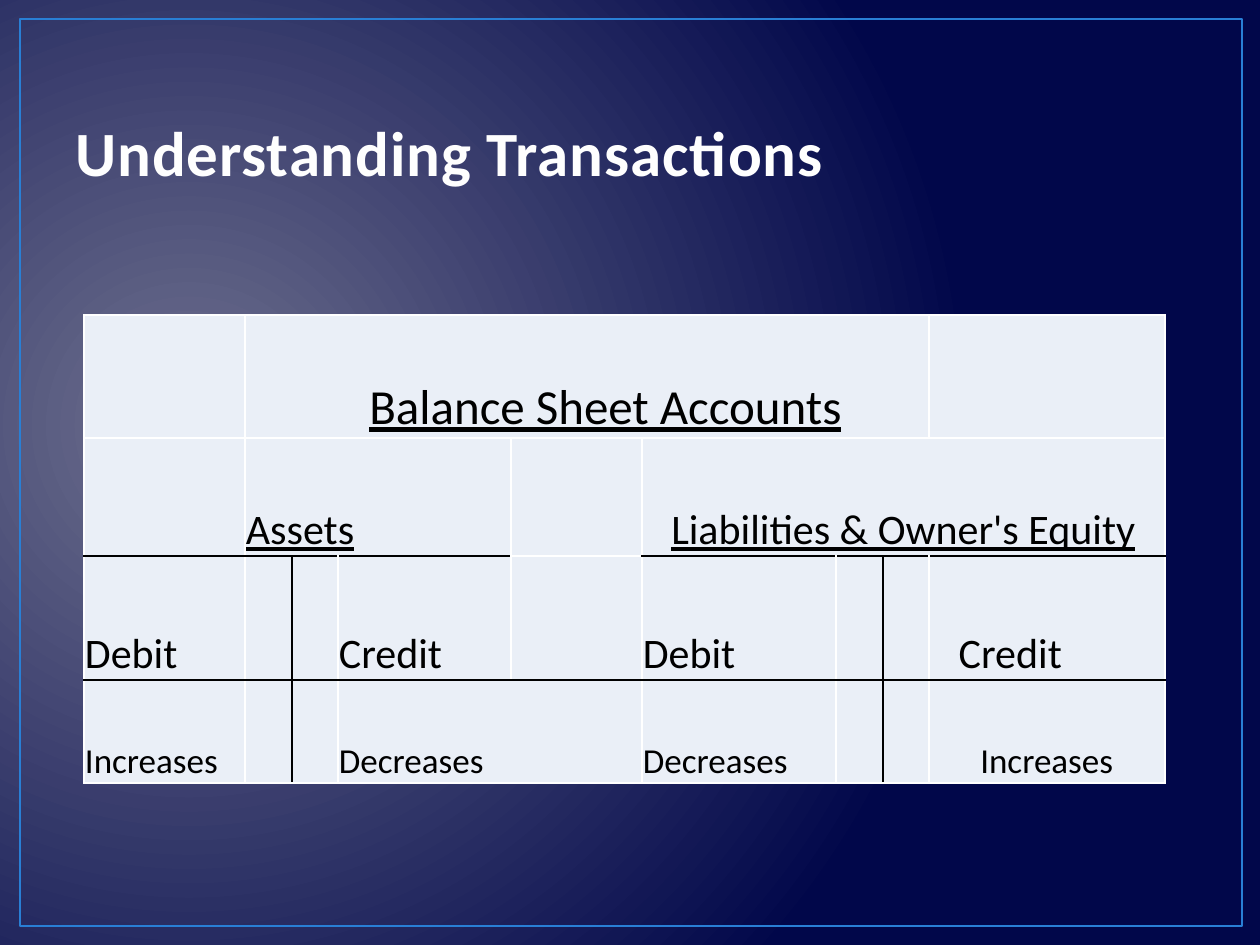
from lxml import etree
from pptx import Presentation
from pptx.dml.color import RGBColor
from pptx.enum.shapes import MSO_SHAPE
from pptx.enum.text import MSO_ANCHOR, PP_ALIGN
from pptx.oxml.ns import qn
from pptx.util import Pt

RECTANGLE = MSO_SHAPE.RECTANGLE
BOTTOM = MSO_ANCHOR.BOTTOM
LEFT, CENTER = PP_ALIGN.LEFT, PP_ALIGN.CENTER
SCALE = 914400 / 126
FONT = "Calibri"
COLORS = {
    "glow": "6E708E",
    "navy": "01074A",
    "frame": "297FD5",
    "title": "FEFEFE",
    "outline": "234F77",
    "cell": "EAEFF7",
    "white": "FFFFFF",
    "black": "000000",
}
COLUMNS = [161, 47, 46, 173, 131, 194, 47, 46, 236]
ROWS = [123, 118, 124, 103]
GAP_COLUMN = 4
STEM_COLUMNS = (1, 6)
MERGES = [(0, 1, 7), (1, 1, 3), (1, 5, 8), (3, 3, 4)]
ENTRIES = [
    (0, 1, "Balance Sheet Accounts", {"size": 28, "underline": True, "align": CENTER}, 38),
    (1, 1, "Assets", {"underline": True}, 1),
    (1, 5, "Liabilities & Owner's Equity", {"underline": True, "align": CENTER}, 1),
    (2, 0, "Debit", {}, 1),
    (2, 3, "Credit", {}, 1),
    (2, 5, "Debit", {}, 1),
    (2, 8, "Credit", {}, 30),
    (3, 0, "Increases", {"size": 20}, 1),
    (3, 3, "Decreases", {"size": 20}, 1),
    (3, 5, "Decreases", {"size": 20}, 1),
    (3, 8, "Increases", {"size": 20, "align": CENTER}, 1),
]


def px(value):
    return round(value * SCALE)


def rgb(name):
    return RGBColor.from_string(COLORS[name])


def line_element(tag, color, points):
    line = etree.Element(qn(tag), w=str(Pt(points)))
    fill = etree.SubElement(line, qn("a:solidFill"))
    etree.SubElement(fill, qn("a:srgbClr"), val=COLORS[color])
    return line


def write(frame, text, size=24, color="black", bold=False, underline=False, align=LEFT):
    para = frame.paragraphs[0]
    para.alignment = align
    span = para.add_run()
    span.text = text
    font = span.font
    font.name, font.size = FONT, Pt(size)
    font.bold, font.underline = bold, underline
    font.color.rgb = rgb(color)
    return span


def row_rule(row, column):
    return row == 2 or (row == 1 and column != GAP_COLUMN)


def stem(row, column):
    return row >= 2 and column in STEM_COLUMNS


class SlideBuilder:
    def __init__(self, deck):
        self.page = deck.slides.add_slide(deck.slide_layouts[5])

    def background(self):
        fill = self.page.background.fill
        fill.gradient()
        for stop, color, position in zip(fill.gradient_stops, ("glow", "navy"), (0, 1)):
            stop.color.rgb = rgb(color)
            stop.position = position
        gradient = self.page.element.find(".//" + qn("a:gradFill"))
        gradient.remove(gradient.find(qn("a:lin")))
        circle = etree.Element(qn("a:path"), path="circle")
        etree.SubElement(circle, qn("a:fillToRect"), l="15000", t="50000", r="85000", b="60000")
        gradient.find(qn("a:gsLst")).addnext(circle)

    def frame(self, left, top, width, height):
        box = self.page.shapes.add_shape(RECTANGLE, px(left), px(top), px(width), px(height))
        box.shadow.inherit = False
        box.fill.background()
        box.line.color.rgb = rgb("frame")
        box.line.width = Pt(1.5)

    def title(self, text, left, top, width, height):
        box = self.page.shapes.title
        box.left, box.top, box.width, box.height = map(px, (left, top, width, height))
        box.text_frame.vertical_anchor = BOTTOM
        span = write(box.text_frame, text, size=36, color="title", bold=True)
        properties = span.font._element
        properties.set("spc", "50")
        properties.insert(0, line_element("a:ln", "outline", 1.05))

    def table(self, left, top):
        shape = self.page.shapes.add_table(
            len(ROWS), len(COLUMNS), px(left), px(top), px(sum(COLUMNS)), px(sum(ROWS)))
        table = shape.table
        table.first_row = table.horz_banding = False
        for column, width in zip(table.columns, COLUMNS):
            column.width = px(width)
        for row, height in zip(table.rows, ROWS):
            row.height = px(height)
        for row in range(len(ROWS)):
            for column in range(len(COLUMNS)):
                self.cell(table.cell(row, column), row, column)
        for row, first, last in MERGES:
            table.cell(row, first).merge(table.cell(row, last))
        for row, column, text, style, indent in ENTRIES:
            cell = table.cell(row, column)
            cell.margin_left = px(indent)
            write(cell.text_frame, text, **style)

    def cell(self, cell, row, column):
        cell.vertical_anchor = BOTTOM
        cell.margin_left = cell.margin_right = cell.margin_top = px(1)
        cell.margin_bottom = 0
        sides = {
            "a:lnL": stem(row, column - 1),
            "a:lnR": stem(row, column),
            "a:lnT": row_rule(row - 1, column),
            "a:lnB": row_rule(row, column),
        }
        properties = cell._tc.get_or_add_tcPr()
        for tag, ruled in sides.items():
            properties.append(line_element(tag, "black" if ruled else "white", 1))
        cell.fill.solid()
        cell.fill.fore_color.rgb = rgb("cell")


def main():
    deck = Presentation()
    deck.slide_width, deck.slide_height = px(1260), px(945)
    slide = SlideBuilder(deck)
    slide.background()
    slide.frame(20, 19, 1222, 907)
    slide.title("Understanding Transactions", 63, 38, 1134, 157)
    slide.table(84, 315)
    deck.save("out.pptx")


if __name__ == "__main__":
    main()
